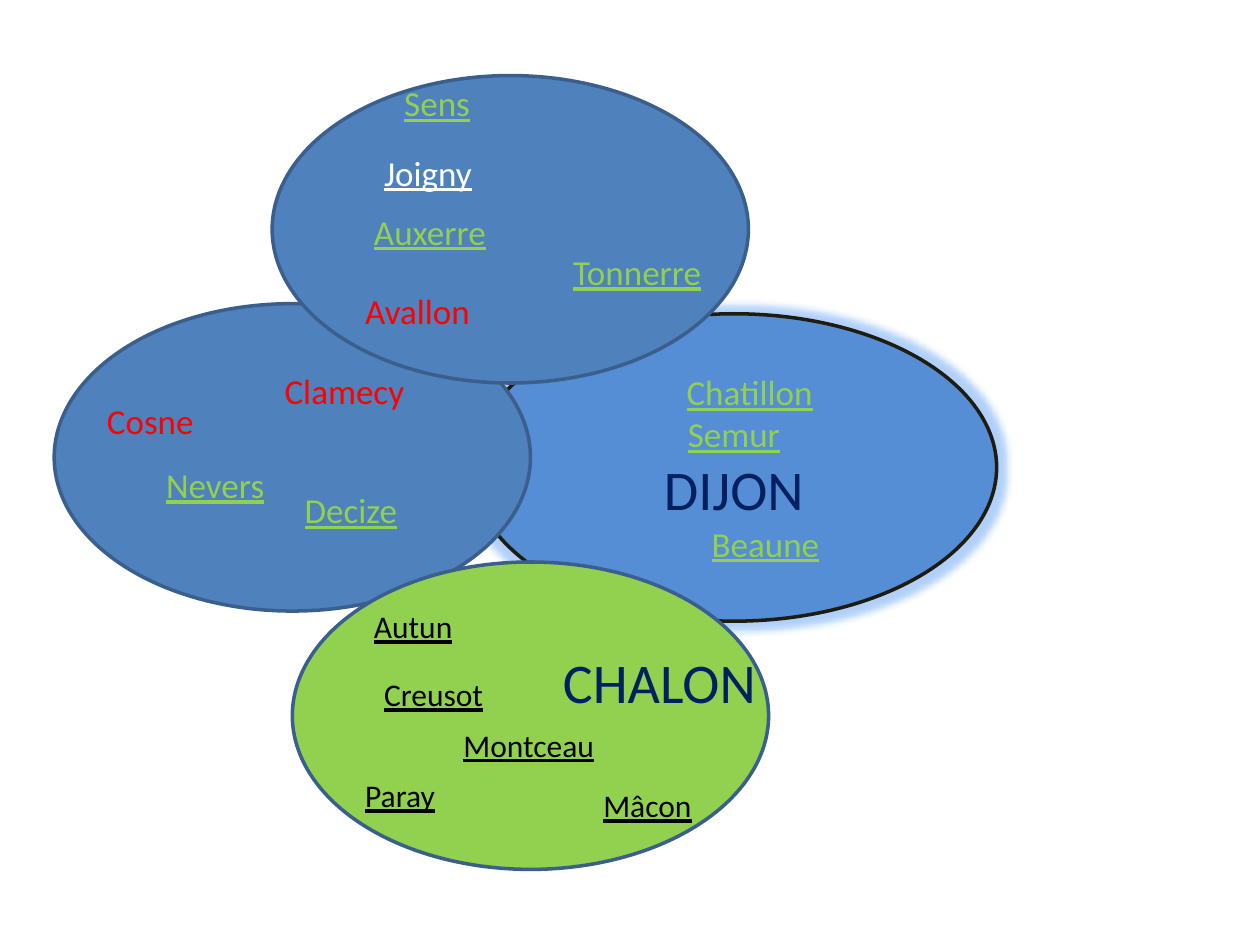
from typing import NamedTuple

from lxml.etree import SubElement
from pptx import Presentation
from pptx.dml.color import RGBColor
from pptx.enum.shapes import MSO_SHAPE
from pptx.enum.text import MSO_ANCHOR, MSO_AUTO_SIZE, PP_ALIGN
from pptx.oxml.ns import qn
from pptx.util import Inches, Pt

SLIDE_W, SLIDE_H = Inches(10), Inches(7.5)
FONT = "Calibri"
COLORS = {
    "blue": "4F81BD", "bright": "558ED5", "green": "92D050", "edge": "3A5F8C",
    "dark": "1E1C11", "glow": "3D8BF2", "navy": "002060", "red": "FF0000",
    "white": "FFFFFF", "black": "000000",
}
# Label height by text size, in percent of the slide height
LABEL_H = {18: 5.33, 20: 5.87, 32: 8.53}
OVAL_H = 32.53


# Places and widths are percentages of the slide's width and height
class Zone(NamedTuple):
    x: float
    y: float
    fill: str
    w: float = 37.8
    line: str = "edge"


class Town(NamedTuple):
    name: str
    x: float
    y: float
    color: str
    w: float = 12.6
    size: int = 20
    underline: bool = True


EAST = Zone(37.4, 33.2, "bright", 41.7, "dark")
WEST = Zone(4.3, 32.13, "blue")
NORTH = Zone(21.6, 8, "blue")
SOUTH = Zone(23.2, 59.47, "green")

TOWNS = [
    # North
    Town("Sens", 31.1, 8, "green", 7.9),
    Town("Auxerre", 28.7, 21.6, "green"),
    Town("Tonnerre", 44.5, 25.87, "green"),
    Town("Joigny", 29.5, 15.33, "white"),
    Town("Avallon", 28, 30, "red", underline=False),
    # West
    Town("Nevers", 12.2, 48.4, "green", 11),
    Town("Decize", 23.2, 51.07, "green", 11),
    Town("Cosne", 7.5, 41.6, "red", 11, underline=False),
    Town("Clamecy", 21.6, 38.4, "red", 14.2, underline=False),
    # South
    Town("CHALON", 43.7, 67.87, "navy", 19.7, 32, False),
    Town("Mâcon", 46.9, 82.53, "black", size=18),
    Town("Creusot", 29.5, 70.8, "black", size=18),
    Town("Montceau", 35.8, 76.13, "black", size=18),
    Town("Autun", 28.7, 63.6, "black", size=18),
    Town("Paray", 28, 81.47, "black", size=18),
]

# Lines inside the east oval: size, colour, (text, underlined) runs
EAST_LINES = [
    (20, "green", [("\t\t", False), ("Chatillon", True),
                   ("\t\t", False), ("Semur", True)]),
    (32, "navy", [("DIJON", False)]),
    (20, "green", [("\t", False), ("Beaune", True)]),
]


def rgb(name: str) -> RGBColor:
    return RGBColor.from_string(COLORS[name])


def box(x: float, y: float, w: float, h: float) -> tuple:
    return (int(SLIDE_W * x / 100), int(SLIDE_H * y / 100),
            int(SLIDE_W * w / 100), int(SLIDE_H * h / 100))


def style(p, size: int, color: str) -> None:
    p.font.name = FONT
    p.font.size = Pt(size)
    p.font.color.rgb = rgb(color)


def add_zone(slide, zone: Zone):
    sp = slide.shapes.add_shape(
        MSO_SHAPE.OVAL, *box(zone.x, zone.y, zone.w, OVAL_H))
    sp.shadow.inherit = False
    sp.fill.solid()
    sp.fill.fore_color.rgb = rgb(zone.fill)
    sp.line.color.rgb = rgb(zone.line)
    sp.line.width = Pt(2)
    return sp


def add_glow(sp, color: str, radius: int, opacity: int) -> None:
    effects = sp._element.spPr.find(qn("a:effectLst"))
    glow = SubElement(effects, qn("a:glow"), rad=str(radius))
    clr = SubElement(glow, qn("a:srgbClr"), val=COLORS[color])
    SubElement(clr, qn("a:alpha"), val=str(opacity * 1000))


def add_east_text(sp) -> None:
    tf = sp.text_frame
    tf.word_wrap = True
    tf.vertical_anchor = MSO_ANCHOR.MIDDLE
    for i, (size, color, runs) in enumerate(EAST_LINES):
        p = tf.add_paragraph() if i else tf.paragraphs[0]
        p.alignment = PP_ALIGN.CENTER
        style(p, size, color)
        for text, underline in runs:
            r = p.add_run()
            r.text = text
            r.font.underline = underline


def add_town(slide, town: Town) -> None:
    tb = slide.shapes.add_textbox(
        *box(town.x, town.y, town.w, LABEL_H[town.size]))
    tf = tb.text_frame
    tf.word_wrap = True
    tf.auto_size = MSO_AUTO_SIZE.SHAPE_TO_FIT_TEXT
    p = tf.paragraphs[0]
    p.text = town.name
    style(p, town.size, town.color)
    p.font.underline = town.underline


def main() -> None:
    prs = Presentation()
    prs.slide_width, prs.slide_height = SLIDE_W, SLIDE_H
    s = prs.slides.add_slide(prs.slide_layouts[6])

    # Overlapping ovals, back to front
    east = add_zone(s, EAST)
    add_glow(east, "glow", Inches(0.11), 40)
    add_east_text(east)
    for zone in (WEST, NORTH, SOUTH):
        add_zone(s, zone)

    # Town names
    for town in TOWNS:
        add_town(s, town)

    prs.save("out.pptx")


if __name__ == "__main__":
    main()
